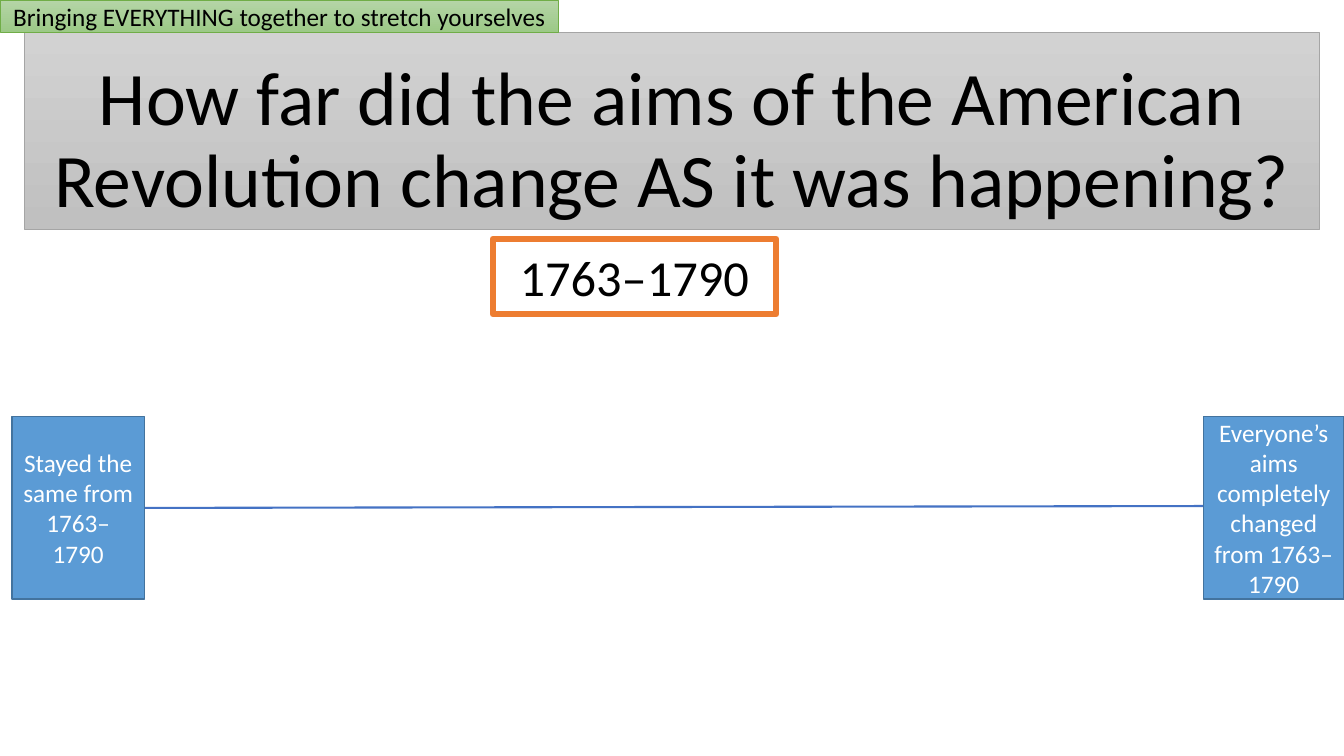
"""Build a slide with a continuum line about the aims of the American Revolution."""
from dataclasses import dataclass

from lxml import etree
from pptx import Presentation
from pptx.dml.color import RGBColor
from pptx.enum.shapes import MSO_CONNECTOR, MSO_SHAPE
from pptx.enum.text import MSO_ANCHOR, MSO_AUTO_SIZE, PP_ALIGN
from pptx.oxml.ns import qn
from pptx.util import Cm, Pt

RECTANGLE = MSO_SHAPE.RECTANGLE
STRAIGHT = MSO_CONNECTOR.STRAIGHT
MIDDLE, BOTTOM = MSO_ANCHOR.MIDDLE, MSO_ANCHOR.BOTTOM
CENTER = PP_ALIGN.CENTER
NO_AUTOFIT = MSO_AUTO_SIZE.NONE


@dataclass(frozen=True)
class Theme:
    font: str = "Calibri"
    title_size: int = 54
    dates_size: int = 36
    body_size: int = 18
    black: str = "000000"
    white: str = "FFFFFF"
    gray_fill: tuple = ("D2D2D2", "C0C0C0")
    gray_line: str = "A5A5A5"
    green_fill: tuple = ("B5D5A7", "9CC987")
    green_line: str = "70AD47"
    blue_fill: str = "5B9BD5"
    blue_line: str = "43739E"
    orange_line: str = "ED7D31"
    scale_line: str = "4472C4"


THEME = Theme()


def write_text(shape, text, *, size, color, anchor=MIDDLE, line_spacing=1.0):
    frame = shape.text_frame
    frame.word_wrap = True
    frame.auto_size = NO_AUTOFIT
    frame.vertical_anchor = anchor
    paragraph = frame.paragraphs[0]
    paragraph.alignment = CENTER
    paragraph.line_spacing = line_spacing
    run = paragraph.add_run()
    run.text = text
    run.font.name = THEME.font
    run.font.size = Pt(size)
    run.font.color.rgb = RGBColor.from_string(color)


def paint(shape, fill, line, line_width):
    if isinstance(fill, tuple):
        shape.fill.gradient()
        shape.fill.gradient_angle = 270
        for stop, color in zip(shape.fill.gradient_stops, fill):
            stop.color.rgb = RGBColor.from_string(color)
    else:
        shape.fill.solid()
        shape.fill.fore_color.rgb = RGBColor.from_string(fill)
    shape.line.color.rgb = RGBColor.from_string(line)
    shape.line.width = Pt(line_width)
    shape.shadow.inherit = False


presentation = Presentation()
presentation.slide_width = Cm(33.87)
presentation.slide_height = Cm(19.05)
slide = presentation.slides.add_slide(presentation.slide_layouts[5])

title = slide.shapes.title
title.left, title.top, title.width, title.height = Cm(0.61), Cm(0.82), Cm(32.64), Cm(4.95)
paint(title, THEME.gray_fill, THEME.gray_line, 0.5)
write_text(title, "How far did the aims of the American Revolution change AS it was happening?",
           size=THEME.title_size, color=THEME.black, anchor=BOTTOM, line_spacing=0.9)

scale = slide.shapes.add_connector(STRAIGHT, Cm(3.05), Cm(12.8), Cm(31.04), Cm(12.75))
scale.line.color.rgb = RGBColor.from_string(THEME.scale_line)
scale.line.width = Pt(1.5)
etree.SubElement(scale._element.spPr, qn("a:effectLst"))

boxes = [
    ("Stayed the same from 1763–1790", (0.3, 10.49, 3.34, 4.61),
     THEME.blue_fill, THEME.blue_line, 1, THEME.body_size, THEME.white),
    ("Everyone’s aims completely changed from 1763–1790", (30.33, 10.49, 3.54, 4.61),
     THEME.blue_fill, THEME.blue_line, 1, THEME.body_size, THEME.white),
    ("1763–1790", (12.42, 6.02, 7.14, 1.9),
     THEME.white, THEME.orange_line, 4.5, THEME.dates_size, THEME.black),
    ("Bringing EVERYTHING together to stretch yourselves", (0, 0, 14.08, 0.82),
     THEME.green_fill, THEME.green_line, 0.5, THEME.body_size, THEME.black),
]
for text, place, fill, line, line_width, size, color in boxes:
    box = slide.shapes.add_shape(RECTANGLE, *map(Cm, place))
    paint(box, fill, line, line_width)
    write_text(box, text, size=size, color=color)

presentation.save("out.pptx")
